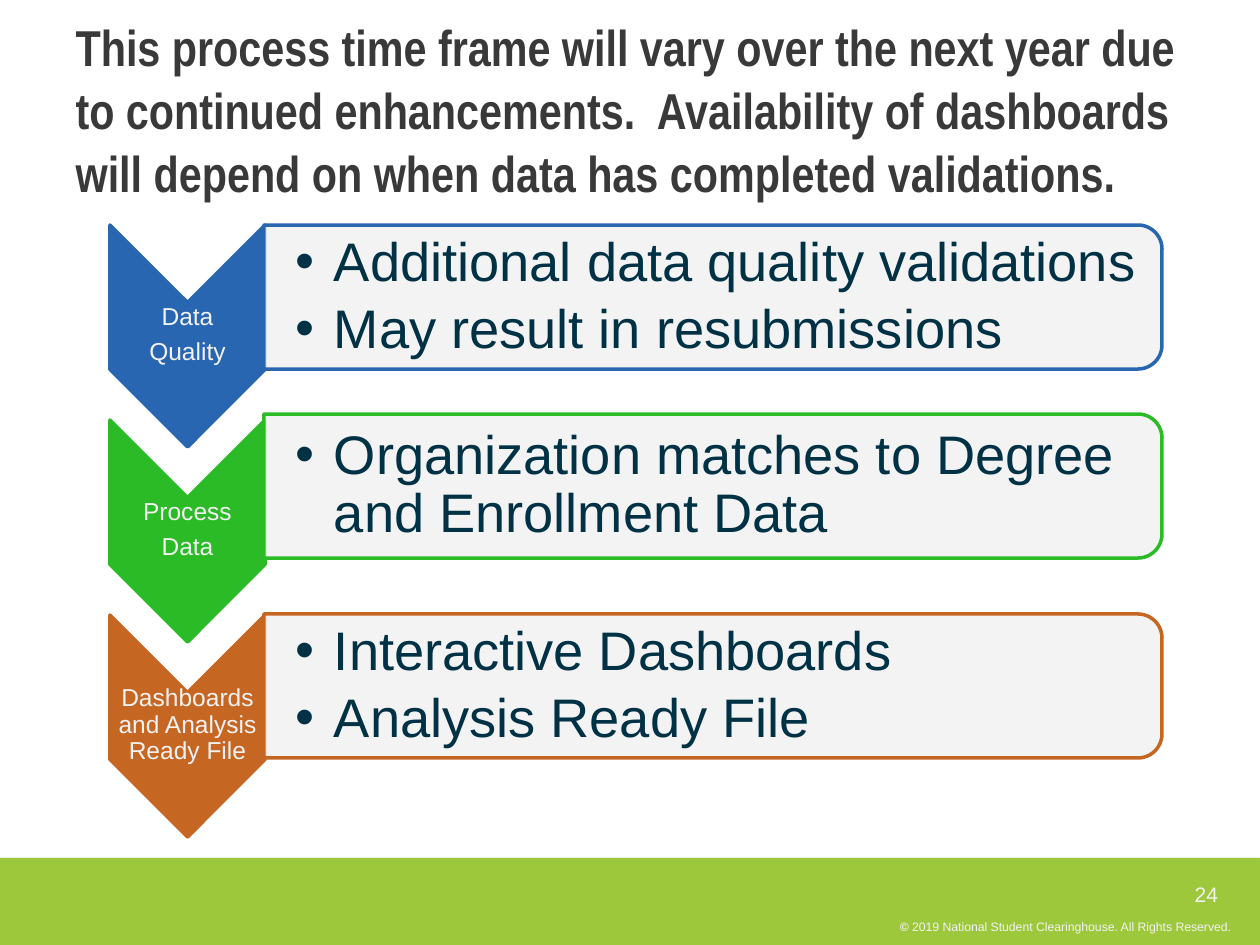
import lxml.etree
import pptx
import pptx.dml.color
import pptx.enum.shapes
import pptx.enum.text
import pptx.oxml
import pptx.oxml.ns
import pptx.util

RGBColor = pptx.dml.color.RGBColor
MSO_SHAPE = pptx.enum.shapes.MSO_SHAPE
MSO_ANCHOR = pptx.enum.text.MSO_ANCHOR
PP_ALIGN = pptx.enum.text.PP_ALIGN
Pt = pptx.util.Pt

LIME = RGBColor(0x9E, 0xC8, 0x3C)
PALE = RGBColor(0xF2, 0xF2, 0xF2)
CHARCOAL = RGBColor(0x39, 0x39, 0x39)
NAVY = RGBColor(0x00, 0x31, 0x44)
BLUE = RGBColor(0x29, 0x66, 0xB1)
GREEN = RGBColor(0x2A, 0xBB, 0x27)
ORANGE = RGBColor(0xC6, 0x66, 0x23)

TITLE = ("This process time frame will vary over the next year due to continued "
         "enhancements.  Availability of dashboards will depend on when data has "
         "completed validations.")
COPYRIGHT = ("© ", "2019 National Student Clearinghouse. All Rights Reserved.")
PAGE_NUMBER = "24"

# Colour, panel top in px, chevron label lines, panel bullets
STEPS = [
    (BLUE, 225, ["Data", "Quality"],
     ["Additional data quality validations", "May result in resubmissions"]),
    (GREEN, 414, ["Process", "Data"],
     ["Organization matches to Degree and Enrollment Data"]),
    (ORANGE, 614, ["Dashboards and Analysis Ready File"],
     ["Interactive Dashboards", "Analysis Ready File"]),
]

SLIDE_SIZE = (1260, 945)
BAR_TOP = 858
CHEVRON_LEFT, CHEVRON_TOP, CHEVRON_STEP = 110, 225, 195
CHEVRON_WIDTH, CHEVRON_HEIGHT = 155, 222
LABEL_OFFSET, LABEL_HEIGHT = 77, 67
PANEL_LEFT, PANEL_WIDTH, PANEL_HEIGHT = 264, 898, 144
PANEL_TEXT_WIDTH, PANEL_TEXT_HEIGHT = 891, 130
BULLET_INDENT = 39


def px(length):
    return pptx.util.Emu(round(length * 914400 / 126))


def add_turned_shape(slide, kind, left, top, width, height, adjustments, fill, line):
    """Add a shape turned by 90 degrees that covers the given box as seen."""
    shape = slide.shapes.add_shape(
        kind, px(left + (width - height) / 2), px(top + (height - width) / 2),
        px(height), px(width))
    shape.rotation = 90
    for index, value in enumerate(adjustments):
        shape.adjustments[index] = value
    shape.shadow.inherit = False
    shape.fill.solid()
    shape.fill.fore_color.rgb = fill
    shape.line.color.rgb = line
    shape.line.width = Pt(2)
    return shape


def format_runs(paragraph, size, color, font="Arial"):
    for run in paragraph.runs:
        run.font.name = font
        run.font.size = Pt(size)
        run.font.color.rgb = color


def add_text(slide, box, lines, size, color, insets, align=None, anchor=MSO_ANCHOR.MIDDLE,
             space_before=0.0, line_spacing=None, bullets=False):
    frame = slide.shapes.add_textbox(*map(px, box)).text_frame
    frame.word_wrap = True
    frame.vertical_anchor = anchor
    (frame.margin_left, frame.margin_top,
     frame.margin_right, frame.margin_bottom) = map(px, insets)
    frame.text = "\n".join(lines)
    for index, paragraph in enumerate(frame.paragraphs):
        if bullets:
            add_bullet(paragraph)
        paragraph.alignment = align
        paragraph.line_spacing = line_spacing
        if index:
            paragraph.space_before = Pt(space_before)
        format_runs(paragraph, size, color)
    return frame


def add_bullet(paragraph):
    properties = paragraph._p.get_or_add_pPr()
    properties.set("marL", str(px(BULLET_INDENT)))
    properties.set("indent", str(-px(BULLET_INDENT)))
    color = lxml.etree.SubElement(properties, pptx.oxml.ns.qn("a:buClr"))
    lxml.etree.SubElement(color, pptx.oxml.ns.qn("a:srgbClr"), val=str(NAVY))
    lxml.etree.SubElement(properties, pptx.oxml.ns.qn("a:buFont"), typeface="Arial")
    lxml.etree.SubElement(properties, pptx.oxml.ns.qn("a:buChar"), char="•")


def set_opacity(shape, percent):
    color = shape.fill._xPr.find(".//" + pptx.oxml.ns.qn("a:srgbClr"))
    lxml.etree.SubElement(color, pptx.oxml.ns.qn("a:alpha"), val=str(percent * 1000))


def add_footer(slide):
    bar = slide.shapes.add_shape(MSO_SHAPE.RECTANGLE, 0, px(BAR_TOP), px(SLIDE_SIZE[0]),
                                 px(SLIDE_SIZE[1] - BAR_TOP))
    bar.fill.solid()
    bar.fill.fore_color.rgb = LIME
    bar.line.fill.background()
    bar._element.spPr.append(pptx.oxml.parse_xml(
        f'<a:effectLst {pptx.oxml.ns.nsdecls("a")}>'
        f'<a:outerShdw blurRad="{Pt(3.1)}" dist="{Pt(1.8)}" dir="5400000" rotWithShape="0">'
        '<a:srgbClr val="000000"><a:alpha val="35000"/></a:srgbClr>'
        '</a:outerShdw></a:effectLst>'))

    insets = (13, 6, 13, 6)
    frame = add_text(slide, (832, 913, 412, 28), COPYRIGHT[:1], 7, PALE, insets,
                     PP_ALIGN.RIGHT, MSO_ANCHOR.TOP)
    paragraph = frame.paragraphs[0]
    paragraph.add_run().text = COPYRIGHT[1]
    format_runs(paragraph, 7, PALE)
    paragraph.runs[0].font.bold = True
    add_text(slide, (1163, 876, 68, 26), [PAGE_NUMBER], 12, PALE, insets,
             PP_ALIGN.RIGHT, MSO_ANCHOR.TOP)


def format_title(title):
    title.left, title.top, title.width, title.height = map(px, (63, 64, 1134, 88))
    frame = title.text_frame
    frame.text = TITLE
    frame.word_wrap = True
    frame.auto_size = pptx.enum.text.MSO_AUTO_SIZE.NONE
    frame.vertical_anchor = MSO_ANCHOR.MIDDLE
    paragraph = frame.paragraphs[0]
    paragraph.alignment = PP_ALIGN.LEFT
    paragraph.line_spacing = 1.04
    format_runs(paragraph, 28.8, CHARCOAL, "Arial Narrow")
    paragraph.runs[0].font.bold = True


def add_step(slide, index, color, panel_top, label, bullets):
    top = CHEVRON_TOP + index * CHEVRON_STEP
    add_turned_shape(slide, MSO_SHAPE.CHEVRON, CHEVRON_LEFT, top, CHEVRON_WIDTH,
                     CHEVRON_HEIGHT, [0.5], color, color)
    add_text(slide, (CHEVRON_LEFT, top + LABEL_OFFSET, CHEVRON_WIDTH, LABEL_HEIGHT),
             label, 14, PALE, (1, 1, 1, 1), PP_ALIGN.CENTER,
             space_before=4.9, line_spacing=0.9)
    panel = add_turned_shape(slide, MSO_SHAPE.ROUND_2_SAME_RECTANGLE, PANEL_LEFT, panel_top,
                             PANEL_WIDTH, PANEL_HEIGHT, [0.167, 0], PALE, color)
    set_opacity(panel, 90)
    text_top = panel_top + (PANEL_HEIGHT - PANEL_TEXT_HEIGHT) / 2
    add_text(slide, (PANEL_LEFT, text_top, PANEL_TEXT_WIDTH, PANEL_TEXT_HEIGHT),
             bullets, 31, NAVY, (31, 2, 2, 2), space_before=4.7, line_spacing=0.9,
             bullets=True)


def main():
    presentation = pptx.Presentation()
    presentation.slide_width, presentation.slide_height = map(px, SLIDE_SIZE)
    slide = presentation.slides.add_slide(presentation.slide_layouts[5])
    add_footer(slide)
    format_title(slide.shapes.title)
    for index, step in enumerate(STEPS):
        add_step(slide, index, *step)
    presentation.save("out.pptx")


if __name__ == "__main__":
    main()
